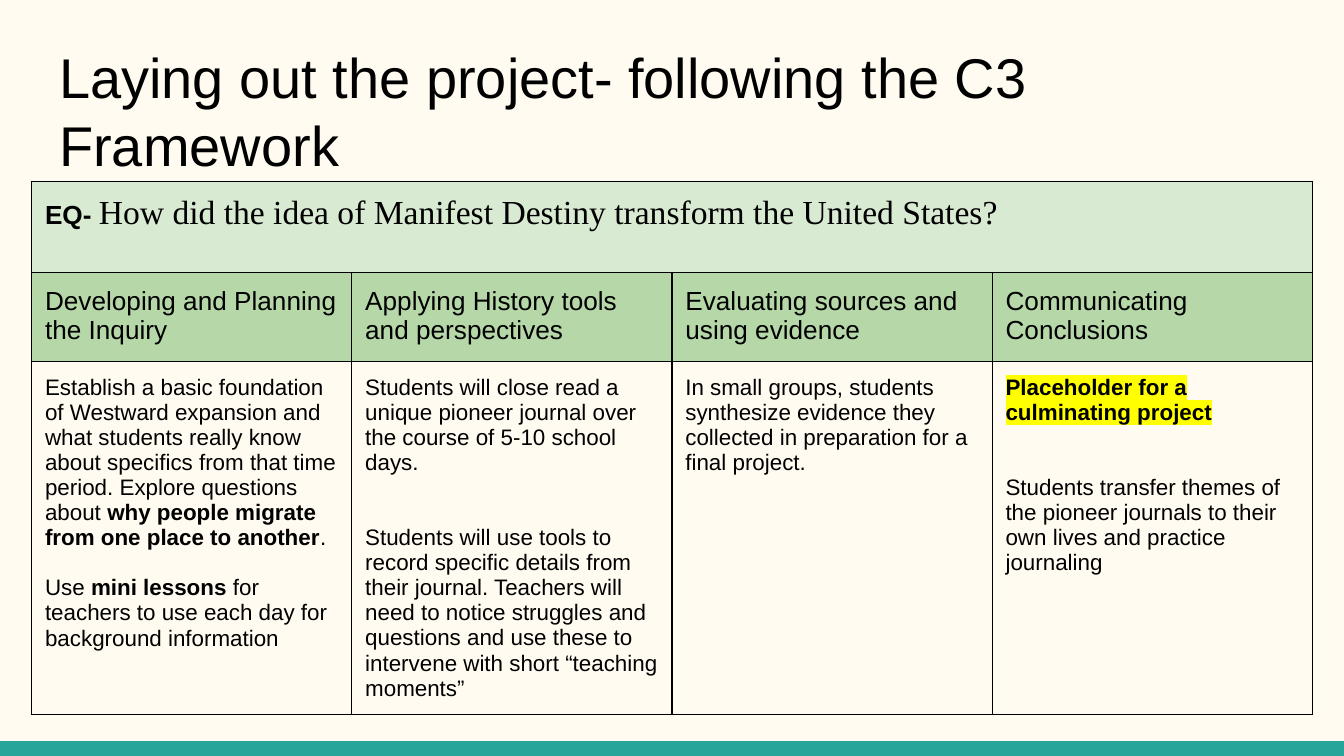
from lxml import etree
from pptx import Presentation
from pptx.dml.color import RGBColor
from pptx.enum.shapes import MSO_SHAPE
from pptx.enum.text import MSO_ANCHOR, MSO_AUTO_SIZE, PP_ALIGN
from pptx.oxml.ns import qn
from pptx.util import Inches, Pt

RECTANGLE = MSO_SHAPE.RECTANGLE
TOP, NO_AUTOFIT, LEFT = MSO_ANCHOR.TOP, MSO_AUTO_SIZE.NONE, PP_ALIGN.LEFT
CREAM = RGBColor(0xFF, 0xFB, 0xF0)
TEAL = RGBColor(0x26, 0xA6, 0x9A)
BLACK = RGBColor(0, 0, 0)
PALE_GREEN = RGBColor(0xD9, 0xEA, 0xD3)
GREEN = RGBColor(0xB6, 0xD7, 0xA8)
YELLOW = RGBColor(0xFF, 0xFF, 0x00)

WIDTH = Inches(10)
HEIGHT = WIDTH * 9 // 16
INSET = Inches(0.1)
BODY_LINE = Pt(13.4)
FRAME = {"margin_left": INSET, "margin_right": INSET, "margin_top": INSET,
         "margin_bottom": INSET, "vertical_anchor": TOP}
BOLD = {"bold": True}
MARKED = {"bold": True, "highlight": YELLOW}

TITLE = "Laying out the project- following the C3 Framework"
QUESTION = [
    ("EQ- ", BOLD),
    ("How did the idea of Manifest Destiny transform the United States?",
     {"size": Pt(18), "name": "Times New Roman"}),
]
STAGES = [
    ("Developing and Planning the Inquiry", 1, [
        [("Establish a basic foundation of Westward expansion and what students "
          "really know about specifics from that time period. Explore questions "
          "about ", {}),
         ("why people migrate from one place to another", BOLD), (".", {})],
        [("Use ", {}), ("mini lessons", BOLD),
         (" for teachers to use each day for background information", {})],
    ]),
    ("Applying History tools and perspectives", 2, [
        [("Students will close read a unique pioneer journal over the course of "
          "5-10 school days.", {})],
        [("Students will use tools to record specific details from their journal. "
          "Teachers will need to notice struggles and questions and use these to "
          "intervene with short “teaching moments”", {})],
    ]),
    ("Evaluating sources and using evidence", 0, [
        [("In small groups, students synthesize evidence they collected in "
          "preparation for a final project.", {})],
    ]),
    ("Communicating Conclusions", 2, [
        [("Placeholder for a culminating project", MARKED)],
        [("Students transfer themes of the pioneer journals to their own lives "
          "and practice journaling", {})],
    ]),
]


def apply_format(target, values):
    """Set each named attribute of the target."""
    for name, value in values.items():
        setattr(target, name, value)


def add_run(paragraph, text, size, changes):
    """Append a black Arial run with the given changes of format."""
    run = paragraph.add_run()
    run.text = text
    values = {"name": "Arial", "size": size, "bold": False, **changes}
    highlight = values.pop("highlight", None)
    run.font.color.rgb = BLACK
    apply_format(run.font, values)
    if highlight is not None:
        mark = etree.Element(qn("a:highlight"))
        etree.SubElement(mark, qn("a:srgbClr"), val=str(highlight))
        run.font._element.find(qn("a:solidFill")).addnext(mark)


def write_paragraphs(text_frame, paragraphs, size, gap=0):
    """Write paragraphs of runs, parted by the given gap."""
    for index, runs in enumerate(paragraphs):
        paragraph = text_frame.add_paragraph() if index else text_frame.paragraphs[0]
        apply_format(paragraph, {"alignment": LEFT, "space_before": gap if index else 0})
        for text, changes in runs:
            add_run(paragraph, text, size, changes)


def add_borders(cell):
    """Draw a thin black line on the four sides of a cell."""
    properties = cell._tc.get_or_add_tcPr()
    for index, side in enumerate(("lnL", "lnR", "lnT", "lnB")):
        line = etree.Element(qn(f"a:{side}"), w=str(Pt(0.75)))
        fill = etree.SubElement(line, qn("a:solidFill"))
        etree.SubElement(fill, qn("a:srgbClr"), val=str(BLACK))
        properties.insert(index, line)


def fill_cell(cell, paragraphs, size, color=None, gap=0):
    """Write the text of a cell and set its fill."""
    apply_format(cell, FRAME)
    write_paragraphs(cell.text_frame, paragraphs, size, gap)
    if color is None:
        cell.fill.background()
    else:
        cell.fill.solid()
        cell.fill.fore_color.rgb = color


def place_title(slide, left, top, width, height):
    """Move and format the title placeholder."""
    title = slide.shapes.title
    apply_format(title, {"left": left, "top": top, "width": width, "height": height})
    apply_format(title.text_frame, {**FRAME, "word_wrap": True, "auto_size": NO_AUTOFIT})
    write_paragraphs(title.text_frame, [[(TITLE, {})]], Pt(30))


def place_framework(slide, left, top, width, row_heights):
    """Build the table of the question and the four stages."""
    frame = slide.shapes.add_table(len(row_heights), len(STAGES), left, top,
                                   width, sum(row_heights))
    table = frame.table
    apply_format(table, {"first_row": False, "horz_banding": False})
    for row, height in zip(table.rows, row_heights):
        row.height = height
    table.cell(0, 0).merge(table.cell(0, len(STAGES) - 1))
    fill_cell(table.cell(0, 0), [QUESTION], Pt(14), PALE_GREEN)
    for column, (heading, blank_lines, paragraphs) in enumerate(STAGES):
        fill_cell(table.cell(1, column), [[(heading, {})]], Pt(14), GREEN)
        fill_cell(table.cell(2, column), paragraphs, Pt(12), gap=blank_lines * BODY_LINE)
    for cell in table.iter_cells():
        add_borders(cell)


def place_footer_bar(slide, left, top, width, height):
    """Draw the plain bar along the foot of the slide."""
    bar = slide.shapes.add_shape(RECTANGLE, left, top, width, height)
    bar.shadow.inherit = False
    bar.fill.solid()
    bar.fill.fore_color.rgb = TEAL
    bar.line.fill.background()


def main():
    """Build the slide and save it."""
    presentation = Presentation()
    apply_format(presentation, {"slide_width": WIDTH, "slide_height": HEIGHT})
    slide = presentation.slides.add_slide(presentation.slide_layouts[5])
    slide.background.fill.solid()
    slide.background.fill.fore_color.rgb = CREAM
    bar_height = Inches(0.11)
    place_footer_bar(slide, 0, HEIGHT - bar_height, WIDTH, bar_height)
    title_left, table_width = Inches(0.34), Inches(9.53)
    place_title(slide, title_left, Inches(0.22), WIDTH - 2 * title_left, Inches(0.67))
    place_framework(slide, (WIDTH - table_width) // 2, Inches(1.35), table_width,
                    [Inches(0.68), Inches(0.66), Inches(2.62)])
    presentation.save("out.pptx")


if __name__ == "__main__":
    main()
